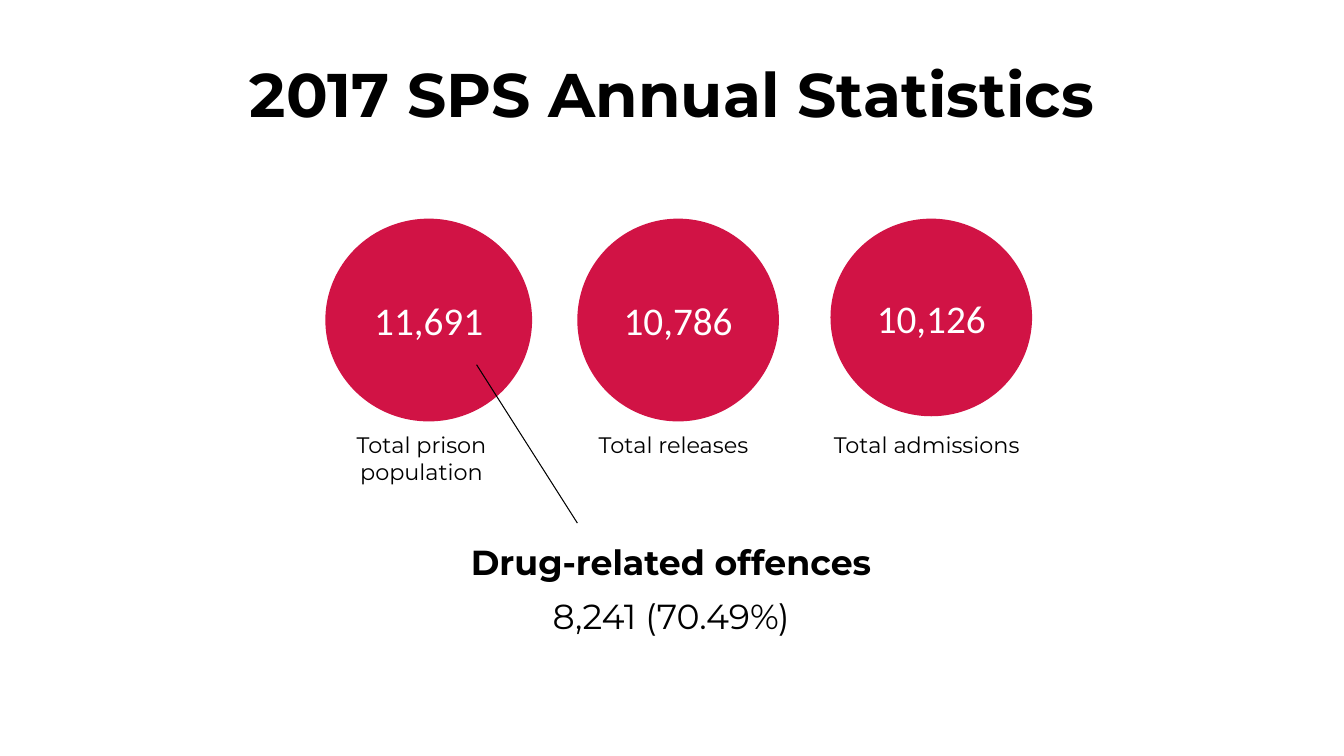
from pptx import Presentation
from pptx.dml.color import RGBColor
from pptx.enum import shapes, text
from pptx.oxml import ns
from pptx.util import Cm, Pt
from lxml import etree

RED = RGBColor(0xD1, 0x13, 0x45)
BLACK = RGBColor(0, 0, 0)
WHITE = RGBColor(255, 255, 255)
MID = text.MSO_ANCHOR.MIDDLE
TOP = text.MSO_ANCHOR.TOP

# Left, width, height of the circle, then its figure and caption
STATS = [
    (8.2, 5.21, 5.11, "11,691", "Total prison population"),
    (14.55, 5.08, 5.11, "10,786", "Total releases"),
    (20.93, 5.08, 4.98, "10,126", "Total admissions"),
]


def write(shape, *lines, size, font="Montserrat", color=BLACK,
          bold=(False,), anchor=TOP, gap=None):
    """Fill a shape with one centred paragraph of one or more lines."""
    frame = shape.text_frame
    frame.word_wrap = True
    frame.auto_size = text.MSO_AUTO_SIZE.NONE
    frame.vertical_anchor = anchor
    para = frame.paragraphs[0]
    para.alignment = text.PP_ALIGN.CENTER
    if gap:
        para.line_spacing = gap
    for n, (line, heavy) in enumerate(zip(lines, bold)):
        if n:
            para.add_line_break()
        run = para.add_run()
        run.text = line
        run.font.name = font
        run.font.size = Pt(size)
        run.font.bold = heavy
        run.font.color.rgb = color


def box(slide, left, top, width, height):
    return slide.shapes.add_textbox(Cm(left), Cm(top), Cm(width), Cm(height))


def disc(slide, left, width, height, value):
    oval = slide.shapes.add_shape(shapes.MSO_SHAPE.OVAL, Cm(left), Cm(5.51),
                                  Cm(width), Cm(height))
    oval.shadow.inherit = False
    oval.fill.solid()
    oval.fill.fore_color.rgb = RED
    oval.line.fill.background()
    write(oval, value, size=28, font="Calibri", color=WHITE, anchor=MID)


def link(slide, x1, y1, x2, y2):
    line = slide.shapes.add_connector(shapes.MSO_CONNECTOR.STRAIGHT,
                                      Cm(x1), Cm(y1), Cm(x2), Cm(y2))
    line.line.color.rgb = BLACK
    line.line.width = Pt(0.75)
    etree.SubElement(line.element.spPr, ns.qn("a:effectLst"))


def main():
    deck = Presentation()
    deck.slide_width, deck.slide_height = Cm(33.87), Cm(19.05)
    slide = deck.slides.add_slide(deck.slide_layouts[5])

    # Title
    title = slide.shapes.title
    title.left, title.top = Cm(1.7), Cm(0.76)
    title.width, title.height = Cm(30.48), Cm(3.18)
    write(title, "2017 SPS Annual Statistics", size=44, bold=(True,),
          anchor=MID)

    # Drug-related share
    write(box(slide, 5.97, 13.18, 21.89, 3.15),
          "Drug-related offences", "8,241 (70.49%)",
          size=24.8, bold=(True, False), gap=1.3)

    # Circles with captions
    for left, width, height, value, label in STATS:
        disc(slide, left, width, height, value)
        write(box(slide, left - 0.51, 10.74, 5.87, 1.63), label, size=16)

    # Line from the population to its drug-related share
    link(slide, 12.01, 9.19, 14.55, 13.18)

    deck.save("out.pptx")


if __name__ == "__main__":
    main()
